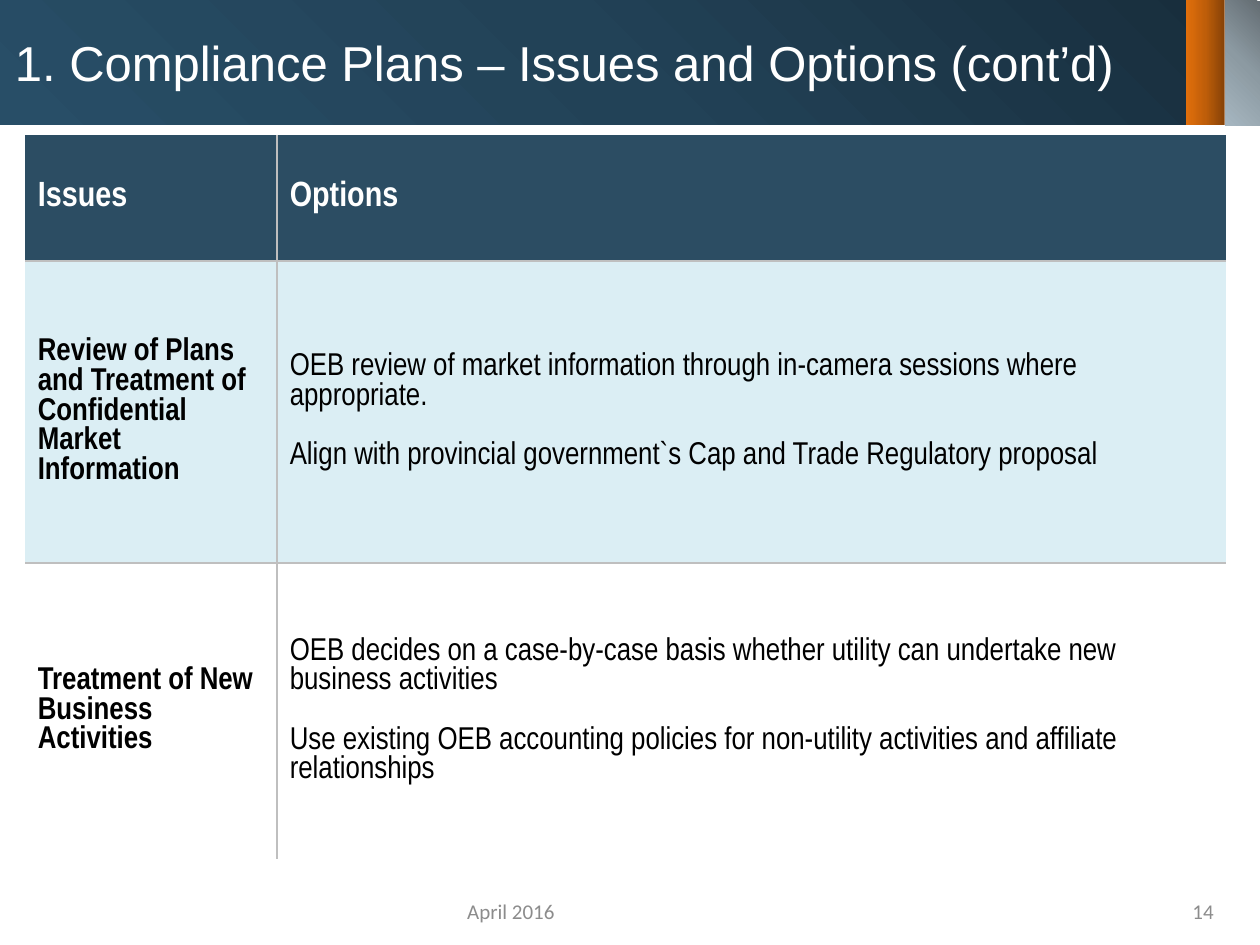
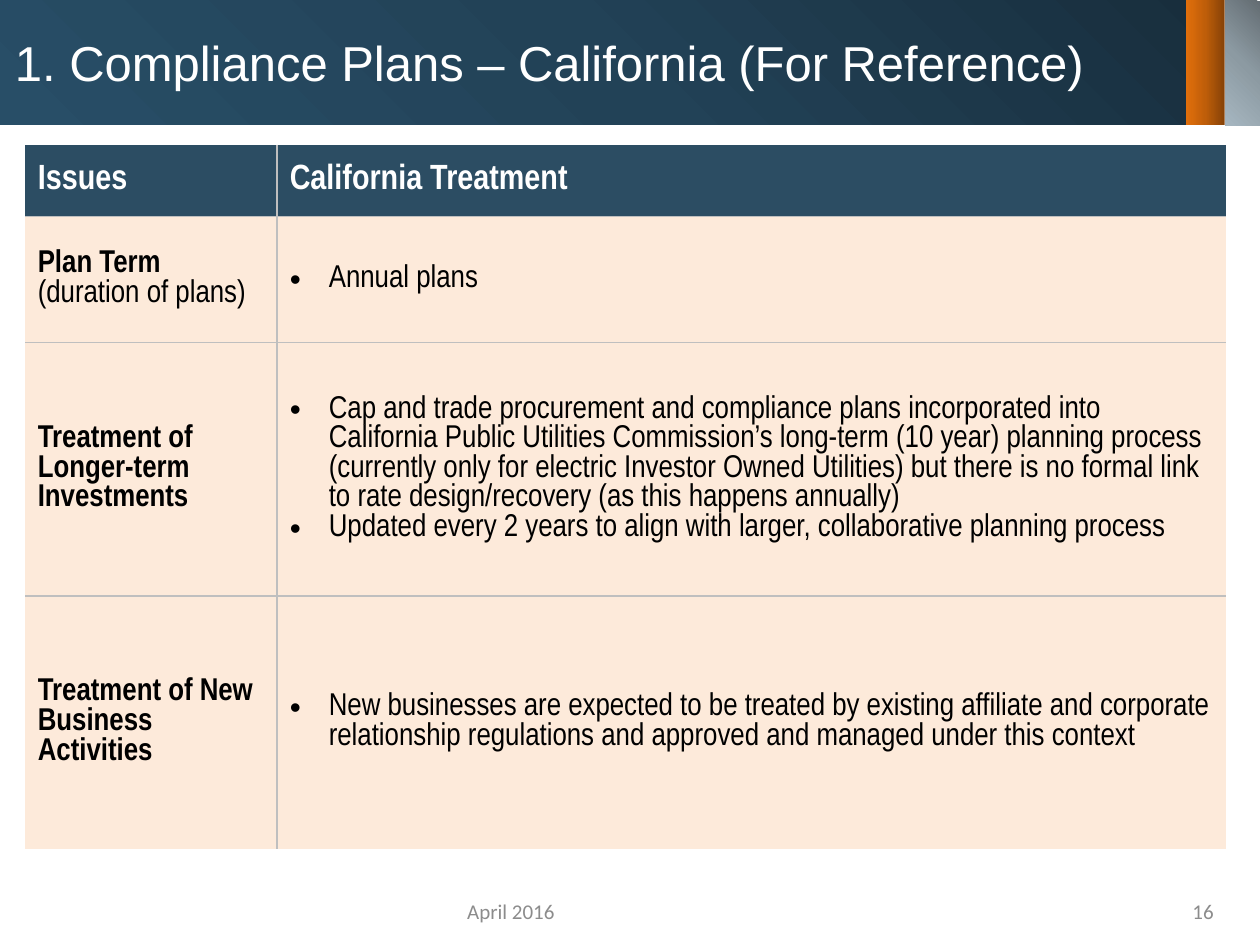
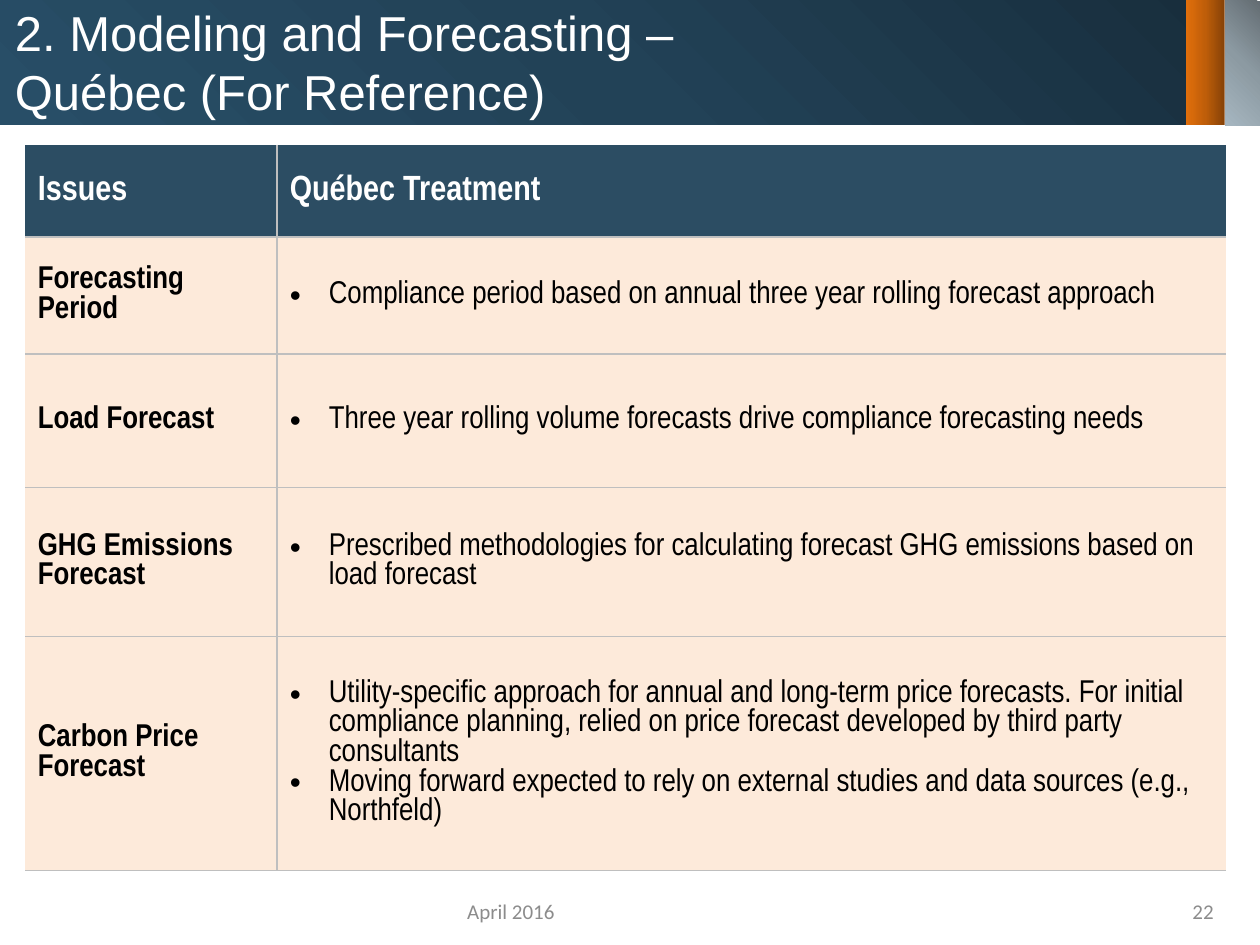
"""Build three compliance and forecasting table slides with a shared banner and footer."""
import copy
import dataclasses

import lxml.etree
import pptx
import pptx.dml.color
import pptx.enum.shapes
import pptx.enum.text
import pptx.oxml.ns
import pptx.util

Inches = pptx.util.Inches
Pt = pptx.util.Pt
qn = pptx.oxml.ns.qn
ALIGN = pptx.enum.text.PP_ALIGN
MIDDLE = pptx.enum.text.MSO_ANCHOR.MIDDLE


@dataclasses.dataclass(frozen=True)
class Theme:
    title_font: str = "Arial"
    table_font: str = "Arial Narrow"
    footer_font: str = "Calibri"
    title_size: int = 28
    header_size: int = 20
    body_size: int = 18
    footer_size: int = 12
    option_gap: int = 17
    white: str = "FFFFFF"
    black: str = "000000"
    footer: str = "8C8C8C"
    header_fill: str = "2C4D63"
    border: str = "BFBFBF"
    blue_fill: str = "DBEEF4"
    peach_fill: str = "FDEADA"
    blue_band: tuple = ("182E3D", "224257", "284E67")
    orange_band: tuple = ("864207", "BF5E09", "E26F0B")
    gray_band: tuple = ("636C72", "8C9AA2", "A6B6C0")


theme = Theme()
NO_STYLE_TABLE = "{2D5ABB26-0587-4C30-8999-92F81FD0307C}"
bands = [
    ((0, 0, 9.6, 0.99), 0, theme.blue_band, 135),
    ((9.07, 0.34, 0.99, 0.31), 90, theme.orange_band, 90),
    ((9.37, 0.36, 0.99, 0.28), 90, theme.gray_band, 45),
]
slides = [
    {
        "title": ["1. Compliance Plans – Issues and Options (cont’d)"],
        "number": "14",
        "top": 1.07,
        "heights": [1, 2.4, 2.35],
        "fills": [theme.blue_fill, theme.white],
        "bulleted": False,
        "bottom_line": False,
        "header": "Options",
        "rows": [
            (["Review of Plans and Treatment of Confidential Market Information"],
             ["OEB review of market information through in-camera sessions where appropriate.",
              "Align with provincial government`s Cap and Trade Regulatory proposal"]),
            (["Treatment of New Business Activities"],
             ["OEB decides on a case-by-case basis whether utility can undertake new business activities",
              "Use existing OEB accounting policies for non-utility activities and affiliate relationships"]),
        ],
    },
    {
        "title": ["1. Compliance Plans – California (For Reference)"],
        "number": "16",
        "top": 1.15,
        "heights": [0.57, 1, 2.01, 2.01],
        "fills": [theme.peach_fill] * 3,
        "bulleted": True,
        "bottom_line": False,
        "header": "California Treatment",
        "rows": [
            (["Plan Term", "(duration of plans)"], ["Annual plans"]),
            (["Treatment of Longer-term Investments"],
             ["Cap and trade procurement and compliance plans incorporated into California Public "
              "Utilities Commission’s long-term (10 year) planning process (currently only for electric "
              "Investor Owned Utilities) but there is no formal link to rate design/recovery "
              "(as this happens annually)",
              "Updated every 2 years to align with larger, collaborative planning process"]),
            (["Treatment of New Business Activities"],
             ["New businesses are expected to be treated by existing affiliate and corporate relationship "
              "regulations and approved and managed under this context"]),
        ],
    },
    {
        "title": ["2. Modeling and Forecasting –", "Québec (For Reference)"],
        "number": "22",
        "top": 1.15,
        "heights": [0.73, 0.93, 1.06, 1.18, 1.86],
        "fills": [theme.peach_fill] * 4,
        "bulleted": True,
        "bottom_line": True,
        "header": "Québec Treatment",
        "rows": [
            (["Forecasting Period"],
             ["Compliance period based on annual three year rolling forecast approach"]),
            (["Load Forecast"],
             ["Three year rolling volume forecasts drive compliance forecasting needs"]),
            (["GHG Emissions Forecast"],
             ["Prescribed methodologies for calculating forecast GHG emissions based on load forecast"]),
            (["Carbon Price Forecast"],
             ["Utility-specific approach for annual and long-term price forecasts. For initial compliance "
              "planning, relied on price forecast developed by third party consultants",
              "Moving forward expected to rely on external studies and data sources (e.g., Northfeld)"]),
        ],
    },
]


def add_run(paragraph, text, font, size, color, bold=False):
    run = paragraph.add_run()
    run.text = text
    run.font.name = font
    run.font.size = Pt(size)
    run.font.bold = bold
    run.font.color.rgb = pptx.dml.color.RGBColor.from_string(color)


def add_text(slide, box, lines, font, size, color, alignment):
    frame = slide.shapes.add_textbox(*map(Inches, box)).text_frame
    frame.word_wrap = True
    frame.vertical_anchor = MIDDLE
    paragraph = frame.paragraphs[0]
    paragraph.alignment = alignment
    for index, line in enumerate(lines):
        if index:
            paragraph.add_line_break()
        add_run(paragraph, line, font, size, color)


presentation = pptx.Presentation()
presentation.slide_width = Inches(10)
presentation.slide_height = Inches(7.5)

for content in slides:
    slide = presentation.slides.add_slide(presentation.slide_layouts[6])

    for box, rotation, colors, angle in bands:
        shape = slide.shapes.add_shape(pptx.enum.shapes.MSO_SHAPE.RECTANGLE, *map(Inches, box))
        shape.shadow.inherit = False
        shape.rotation = rotation
        shape.line.fill.background()
        shape.fill.gradient()
        shape.fill.gradient_angle = 360 - angle
        stop_list = shape._element.spPr.find(".//" + qn("a:gsLst"))
        stop_list.insert(1, copy.deepcopy(stop_list[0]))
        for stop, position, color in zip(shape.fill.gradient_stops, (0, 0.5, 1), colors):
            stop.position = position
            stop.color.rgb = pptx.dml.color.RGBColor.from_string(color)

    add_text(slide, (8.94, 7.08, 0.79, 0.31), [content["number"]],
             theme.footer_font, theme.footer_size, theme.footer, ALIGN.RIGHT)
    add_text(slide, (0.02, 0.06, 9.39, 0.86), content["title"],
             theme.title_font, theme.title_size, theme.white, ALIGN.LEFT)

    heights = content["heights"]
    table = slide.shapes.add_table(len(heights), 2, Inches(0.2), Inches(content["top"]),
                                   Inches(9.53), Inches(sum(heights))).table
    table.horz_banding = False
    table._tbl.tblPr.find(qn("a:tableStyleId")).text = NO_STYLE_TABLE
    for column, width in zip(table.columns, (2, 7.53)):
        column.width = Inches(width)

    rows = [(["Issues"], [content["header"]])] + content["rows"]
    fills = [theme.header_fill] + content["fills"]
    for row_index, (height, fill, row) in enumerate(zip(heights, fills, rows)):
        table.rows[row_index].height = Inches(height)
        is_header = row_index == 0
        size = theme.header_size if is_header else theme.body_size
        color = theme.white if is_header else theme.black

        for column_index, texts in enumerate(row):
            cell = table.cell(row_index, column_index)
            cell.vertical_anchor = MIDDLE
            cell.margin_left = cell.margin_right = Inches(0.1)
            cell.margin_top = cell.margin_bottom = Inches(0.1)
            edges = ["a:lnR" if column_index == 0 else "a:lnL"]
            if not is_header:
                edges.append("a:lnT")
            if row_index < len(rows) - 1 or content["bottom_line"]:
                edges.append("a:lnB")
            for edge in edges:
                line = lxml.etree.SubElement(cell._tc.get_or_add_tcPr(), qn(edge), w=str(Pt(1)))
                solid = lxml.etree.SubElement(line, qn("a:solidFill"))
                lxml.etree.SubElement(solid, qn("a:srgbClr"), val=theme.border)
            cell.fill.solid()
            cell.fill.fore_color.rgb = pptx.dml.color.RGBColor.from_string(fill)

            is_option = column_index == 1 and not is_header
            frame = cell.text_frame
            for index, text in enumerate(texts):
                paragraph = frame.add_paragraph() if index else frame.paragraphs[0]
                if is_option and content["bulleted"]:
                    properties = paragraph._p.get_or_add_pPr()
                    properties.set("marL", str(Inches(0.31)))
                    properties.set("indent", str(Inches(-0.31)))
                    lxml.etree.SubElement(properties, qn("a:buFont"), typeface="Arial")
                    lxml.etree.SubElement(properties, qn("a:buChar"), char="•")
                elif is_option and index:
                    paragraph.space_before = Pt(theme.option_gap)
                add_run(paragraph, text, theme.table_font, size, color,
                        bold=not is_option and index == 0)

    add_text(slide, (3.11, 7.06, 1.89, 0.35), ["April 2016"],
             theme.footer_font, theme.footer_size, theme.footer, ALIGN.CENTER)

presentation.save("out.pptx")
